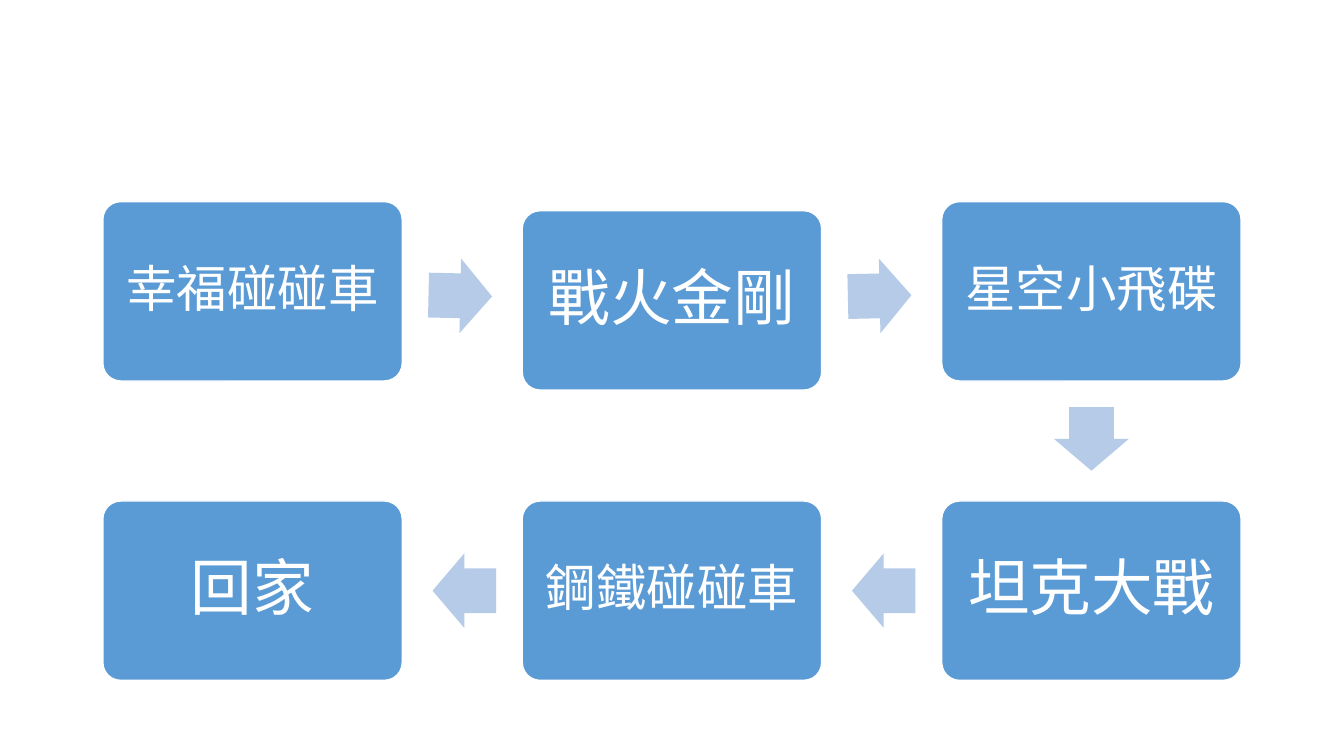
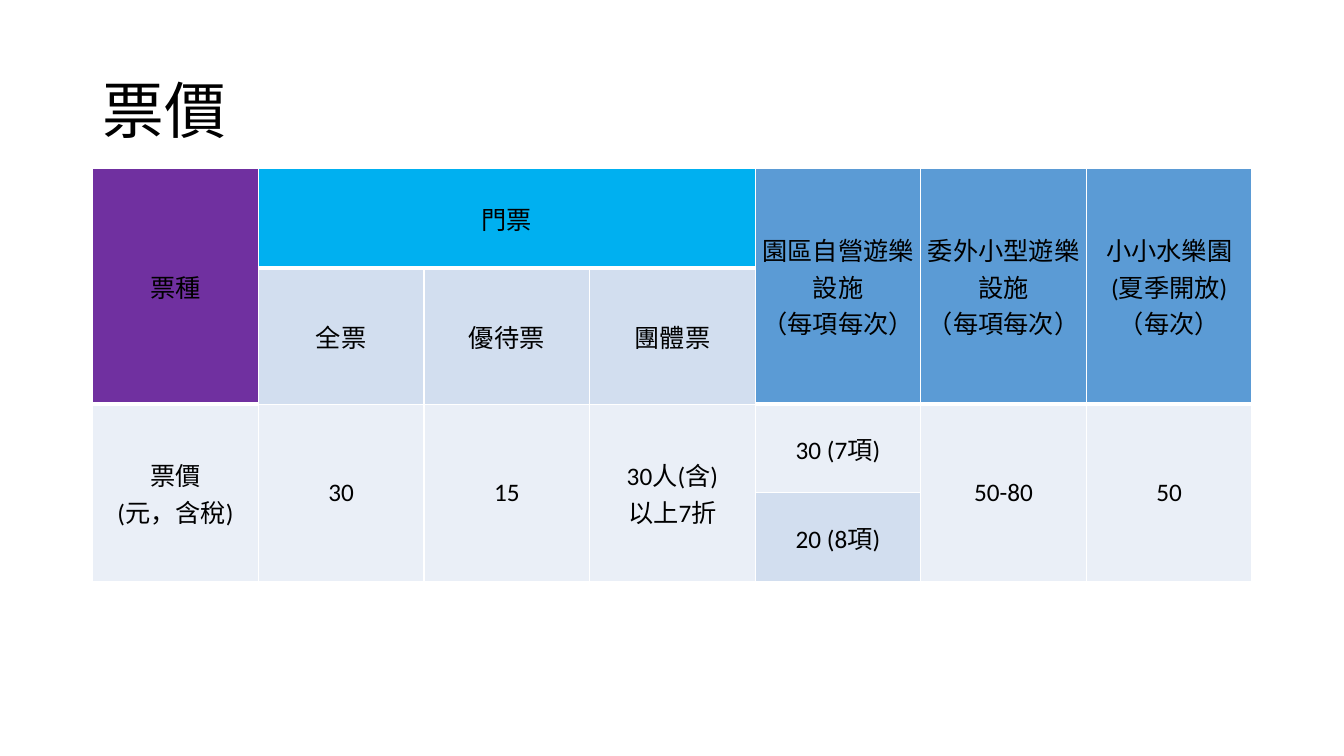
import math

import pptx
import pptx.util
import pptx.dml.color
import pptx.enum.shapes
import pptx.enum.text
import pptx.oxml
import pptx.oxml.ns

Inches = pptx.util.Inches
Pt = pptx.util.Pt
SHAPES = pptx.enum.shapes.MSO_SHAPE
ALIGN = pptx.enum.text.PP_ALIGN
MIDDLE = pptx.enum.text.MSO_ANCHOR.MIDDLE

FONT = "Calibri"
COLORS = {
    "white": "FFFFFF",
    "black": "000000",
    "blue": "5B9BD5",
    "arrow": "B5CBE7",
    "purple": "7030A0",
    "cyan": "00B0F0",
    "band": "D2DEEF",
    "pale": "EAEFF7",
}


# Shared formatting
def color(name):
    return pptx.dml.color.RGBColor.from_string(COLORS[name])


def paint(fill, name):
    fill.solid()
    fill.fore_color.rgb = color(name)


def format_text(text_frame, size, color_name, alignment, line_spacing=None):
    for paragraph in text_frame.paragraphs:
        paragraph.alignment = alignment
        paragraph.line_spacing = line_spacing
        for run in paragraph.runs:
            run.font.name = FONT
            run.font.size = Pt(size)
            run.font.color.rgb = color(color_name)


def set_margins(target, inches):
    target.margin_left = target.margin_right = Inches(inches)
    target.margin_top = target.margin_bottom = Inches(inches)


def add_title(slide, text, left, top, width, height):
    title = slide.shapes.title
    title.left, title.top = Inches(left), Inches(top)
    title.width, title.height = Inches(width), Inches(height)
    title.text_frame.text = text
    title.text_frame.vertical_anchor = MIDDLE
    format_text(title.text_frame, 44, "black", ALIGN.LEFT, 0.9)


# Ride route: boxes running right, down, then back left
STOP_WIDTH, STOP_HEIGHT = 2.97, 1.78
STOPS = [  # text, column, row, drop below the row, text size
    ("幸福碰碰車", 0, 0, 0, 36),
    ("戰火金剛", 1, 0, 0.09, 44),
    ("星空小飛碟", 2, 0, 0, 36),
    ("坦克大戰", 2, 1, 0, 44),
    ("鋼鐵碰碰車", 1, 1, 0, 36),
    ("回家", 0, 1, 0, 44),
]


def add_stop(slide, text, size, left, top):
    box = slide.shapes.add_shape(
        SHAPES.ROUNDED_RECTANGLE, Inches(left), Inches(top),
        Inches(STOP_WIDTH), Inches(STOP_HEIGHT))
    box.adjustments[0] = 0.1
    box.shadow.inherit = False
    paint(box.fill, "blue")
    box.line.color.rgb = color("white")
    box.line.width = Pt(1)
    text_frame = box.text_frame
    text_frame.word_wrap = True
    text_frame.vertical_anchor = MIDDLE
    set_margins(text_frame, 0.15)
    text_frame.text = text
    format_text(text_frame, size, "white", ALIGN.CENTER, 0.9)


def add_route_arrow(slide, start, end, width=0.63, height=0.74, setback=0.02):
    """Point an arrow along the way between two box centres."""
    angle = math.atan2(end[1] - start[1], end[0] - start[0])
    center_x = (start[0] + end[0]) / 2 - setback * math.cos(angle)
    center_y = (start[1] + end[1]) / 2 - setback * math.sin(angle)
    arrow = slide.shapes.add_shape(
        SHAPES.RIGHT_ARROW, Inches(center_x - width / 2),
        Inches(center_y - height / 2), Inches(width), Inches(height))
    arrow.adjustments[0] = 0.6
    arrow.adjustments[1] = 0.5
    arrow.rotation = math.degrees(angle)
    arrow.shadow.inherit = False
    paint(arrow.fill, "arrow")
    arrow.line.fill.background()


def add_route(slide, left, top, column_pitch, row_pitch):
    centers = []
    for text, column, row, drop, size in STOPS:
        x = left + column * column_pitch
        y = top + row * row_pitch + drop
        add_stop(slide, text, size, x, y)
        centers.append((x + STOP_WIDTH / 2, y + STOP_HEIGHT / 2))
    for start, end in zip(centers, centers[1:]):
        add_route_arrow(slide, start, end)


# Ticket price table
ROW_HEIGHTS = [0.99, 1.35, 0.88, 0.88]
COLUMN_COUNT = 7
PRICE_CELLS = [  # row, column, row span, column span, fill, text
    (0, 0, 2, 1, "purple", "票種"),
    (0, 1, 1, 3, "cyan", "門票"),
    (0, 4, 2, 1, "blue", "園區自營遊樂設施\v（每項每次）"),
    (0, 5, 2, 1, "blue", "委外小型遊樂設施\v（每項每次）"),
    (0, 6, 2, 1, "blue", "小小水樂園\v(夏季開放)\v（每次）"),
    (1, 1, 1, 1, "band", "全票"),
    (1, 2, 1, 1, "band", "優待票"),
    (1, 3, 1, 1, "band", "團體票"),
    (2, 0, 2, 1, "pale", "票價\v(元，含稅)"),
    (2, 1, 2, 1, "pale", "30"),
    (2, 2, 2, 1, "pale", "15"),
    (2, 3, 2, 1, "pale", "30人(含)\v以上7折"),
    (2, 4, 1, 1, "pale", "30 (7項)"),
    (2, 5, 2, 1, "pale", "50-80"),
    (2, 6, 2, 1, "pale", "50"),
    (3, 4, 1, 1, "band", "20 (8項)"),
]


def set_borders(cell, bottom_width):
    properties = cell._tc.get_or_add_tcPr()
    widths = {"lnL": 1, "lnR": 1, "lnT": 1, "lnB": bottom_width}
    for index, (side, width) in enumerate(widths.items()):
        border = pptx.oxml.parse_xml(
            f'<a:{side} {pptx.oxml.ns.nsdecls("a")} w="{Pt(width)}"><a:solidFill>'
            f'<a:srgbClr val="{COLORS["white"]}"/></a:solidFill></a:{side}>')
        properties.insert(index, border)


def add_price_table(slide, left, top, width):
    table = slide.shapes.add_table(
        len(ROW_HEIGHTS), COLUMN_COUNT, Inches(left), Inches(top),
        Inches(width), Inches(sum(ROW_HEIGHTS))).table
    table.first_row = table.horz_banding = False
    for column in table.columns:
        column.width = Inches(width / COLUMN_COUNT)
    for row, height in zip(table.rows, ROW_HEIGHTS):
        row.height = Inches(height)

    for row, column, row_span, column_span, fill, text in PRICE_CELLS:
        cell = table.cell(row, column)
        if row_span * column_span > 1:
            cell.merge(table.cell(row + row_span - 1, column + column_span - 1))
        cell.text_frame.text = text
        cell.vertical_anchor = MIDDLE
        set_margins(cell, 0.03)
        format_text(cell.text_frame, 18, "black", ALIGN.CENTER)
        for covered_row in range(row, row + row_span):
            for covered_column in range(column, column + column_span):
                covered = table.cell(covered_row, covered_column)
                paint(covered.fill, fill)
                set_borders(covered, 3 if row == 0 else 1)


# Slides
def build_route_slide(presentation):
    slide = presentation.slides.add_slide(presentation.slide_layouts[6])
    add_route(slide, left=1.02, top=2, column_pitch=4.16, row_pitch=2.97)


def build_price_slide(presentation):
    slide = presentation.slides.add_slide(presentation.slide_layouts[5])
    add_title(slide, "票價", 0.92, 0.4, 11.5, 1.45)
    add_price_table(slide, 0.92, 1.67, 11.5)


def main():
    presentation = pptx.Presentation()
    presentation.slide_width = Inches(13.33)
    presentation.slide_height = Inches(7.5)
    build_route_slide(presentation)
    build_price_slide(presentation)
    presentation.save("out.pptx")


if __name__ == "__main__":
    main()
